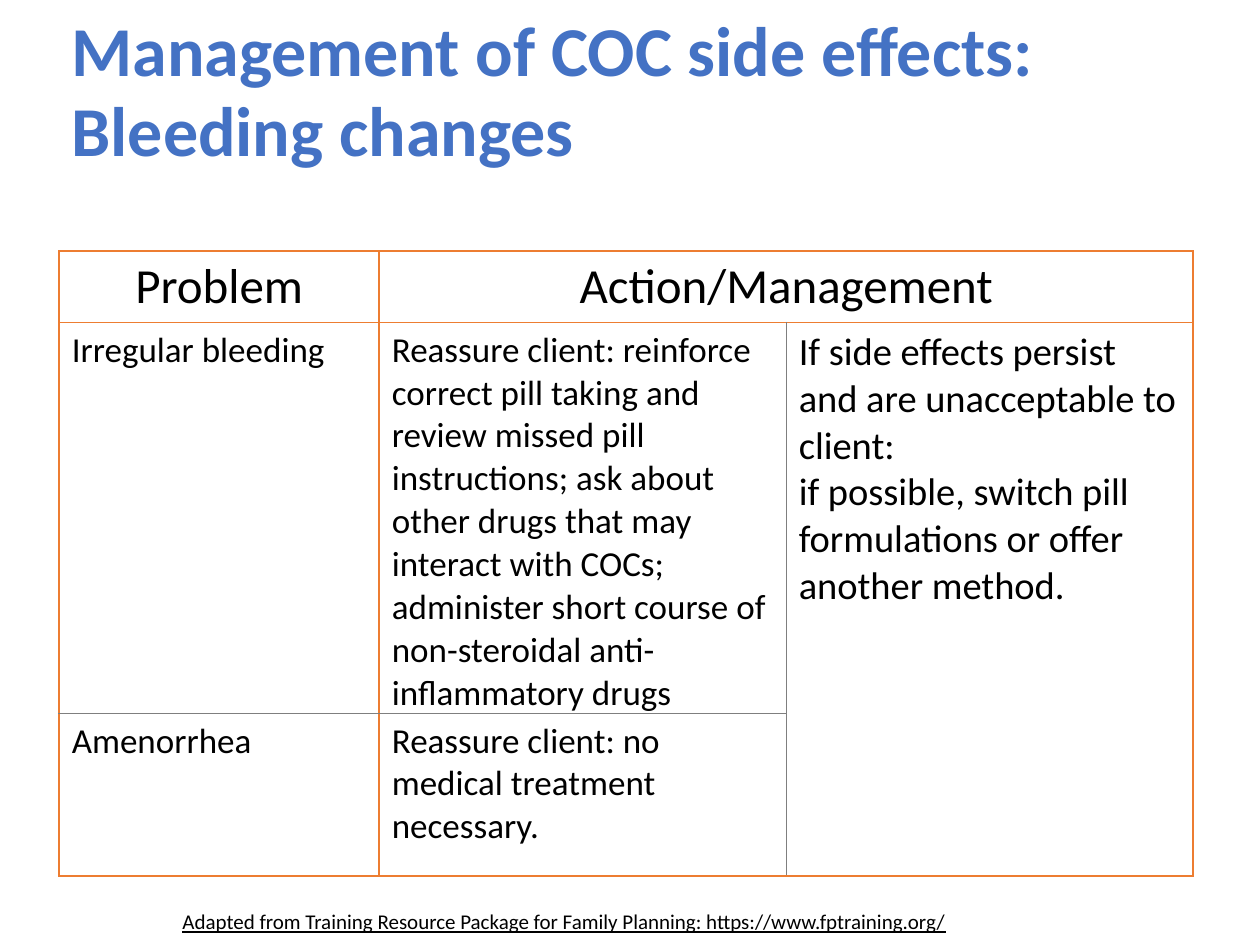
"""Build a slide with a table on managing COC bleeding changes."""
from lxml.etree import SubElement as Sub
from pptx import Presentation
from pptx.dml.color import RGBColor as RGB
from pptx.enum.text import MSO_ANCHOR as Anchor, PP_ALIGN as Align
from pptx.oxml.ns import qn
from pptx.util import Inches, Pt

BLACK, BLUE, ORANGE, GRAY = "000000", "4472C4", "ED7D31", "7F7F7F"
TITLE = "Management of COC side effects:\vBleeding changes"
NOTE = ("Adapted from Training Resource Package for Family Planning: "
        "https://www.fptraining.org/")
COLS = [2.54, 3.23, 3.23]
ROWS = [0.57, 3.1, 1.29]
CELLS = [
    (0, 0, "Problem", 28),
    (0, 1, "Action/Management", 28),
    (1, 0, "Irregular bleeding", 20),
    (1, 1, "Reassure client: reinforce correct pill taking and review missed "
           "pill instructions; ask about other drugs that may interact with "
           "COCs; administer short course of non-steroidal "
           "anti-inflammatory drugs", 20),
    (1, 2, "If side effects persist and are unacceptable to client:\v"
           "if possible, switch pill formulations or offer another method.", 22),
    (2, 0, "Amenorrhea", 20),
    (2, 1, "Reassure client: no medical treatment necessary.", 20),
]
SPANS = [((0, 1), (0, 2)), ((1, 2), (2, 2))]


def write(frame, text, size, color=BLACK):
    frame.word_wrap = True
    frame.text = text.split("\v")[0]
    para = frame.paragraphs[0]
    for line in text.split("\v")[1:]:
        para.add_line_break()
        para.add_run().text = line
    font = para.font
    font.name, font.size = "Calibri", Pt(size)
    font.color.rgb = RGB.from_string(color)
    return para


def add_text(slide, box, text, size, color=BLACK):
    frame = slide.shapes.add_textbox(*map(Inches, box)).text_frame
    return frame, write(frame, text, size, color)


def edge(cell, side, color):
    props = cell._tc.get_or_add_tcPr()
    width = 1 if color == ORANGE else 0.5
    line = Sub(props, qn("a:ln" + side), w=str(Pt(width)))
    Sub(Sub(line, qn("a:solidFill")), qn("a:srgbClr"), val=color)


def add_grid(slide):
    size = map(Inches, (0.47, 1.99, sum(COLS), sum(ROWS)))
    table = slide.shapes.add_table(len(ROWS), len(COLS), *size).table
    table.first_row = table.horz_banding = False
    for col, width in zip(table.columns, COLS):
        col.width = Inches(width)
    for row, height in zip(table.rows, ROWS):
        row.height = Inches(height)
    for r in range(len(ROWS)):
        for c in range(len(COLS)):
            cell = table.cell(r, c)
            for side, x in (("L", c), ("R", c + 1)):
                edge(cell, side, GRAY if x == 2 and r > 0 else ORANGE)
            for side, y in (("T", r), ("B", r + 1)):
                edge(cell, side, GRAY if y == 2 and c < 2 else ORANGE)
            cell.fill.background()
    for start, end in SPANS:
        table.cell(*start).merge(table.cell(*end))
    for r, c, text, size in CELLS:
        cell = table.cell(r, c)
        para = write(cell.text_frame, text, size)
        if r == 0:
            para.alignment = Align.CENTER
            cell.vertical_anchor = Anchor.MIDDLE


def main():
    deck = Presentation()
    deck.slide_width, deck.slide_height = Inches(10), Inches(7.5)
    slide = deck.slides.add_slide(deck.slide_layouts[6])
    frame, para = add_text(slide, (0.47, 0.11, 9, 1.25), TITLE, 40, BLUE)
    frame.vertical_anchor = Anchor.MIDDLE
    para.line_spacing = 0.95
    para.font.bold = True
    add_grid(slide)
    frame, para = add_text(slide, (1.35, 7.16, 6.94, 0.27), NOTE, 12)
    para.font.underline = True
    deck.save("out.pptx")


if __name__ == "__main__":
    main()
